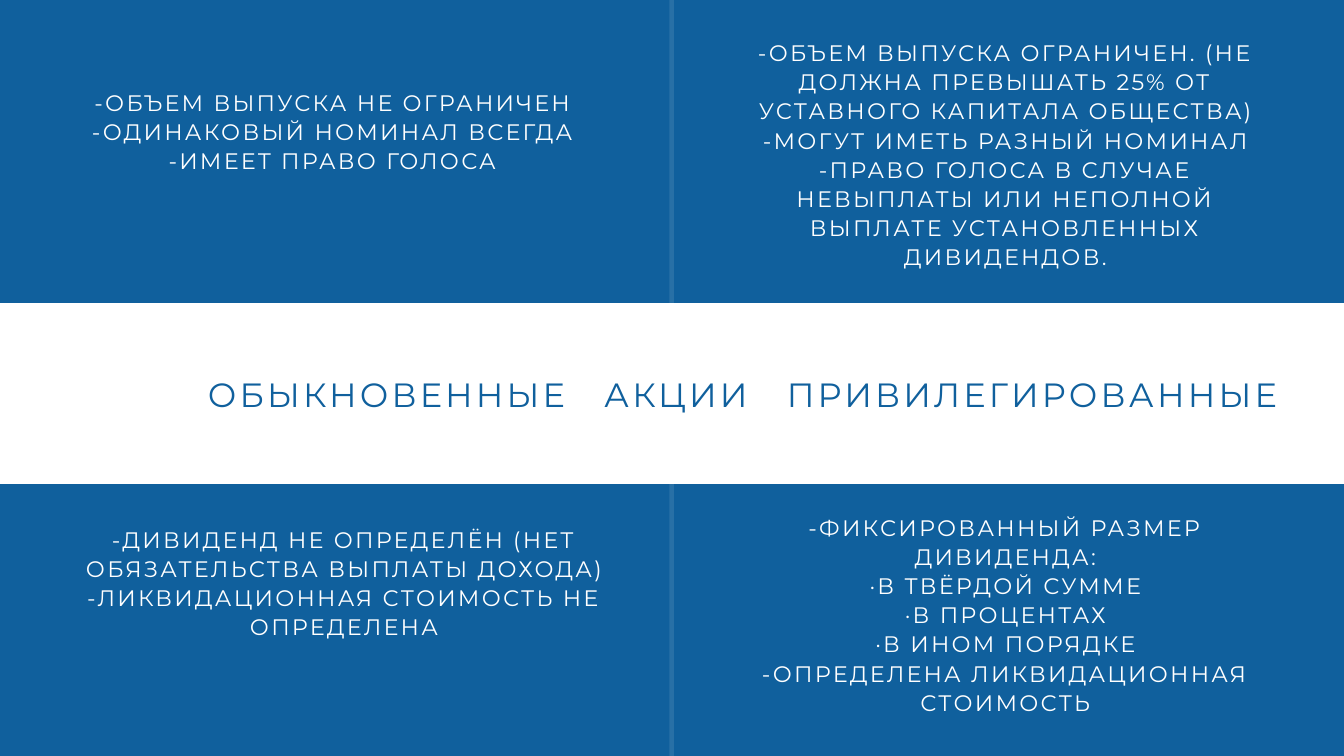
from lxml.etree import SubElement
from pptx import Presentation
from pptx.dml.color import RGBColor
from pptx.enum.shapes import MSO_SHAPE as Preset
from pptx.enum.text import MSO_ANCHOR as Anchor, MSO_AUTO_SIZE as AutoSize, PP_ALIGN as Align
from pptx.oxml.ns import qn
from pptx.util import Inches, Pt

WIDTH, HEIGHT = Inches(20), Inches(11.25)
COLORS = {"blue": "10609D", "white": "FFFFFF"}
FRAME_FORMAT = {
    "margin_left": 0,
    "margin_top": 0,
    "margin_right": 0,
    "margin_bottom": 0,
    "word_wrap": True,
    "vertical_anchor": Anchor.TOP,
    "auto_size": AutoSize.SHAPE_TO_FIT_TEXT,
}
HEADING = {"size": 36, "leading": 43.2, "tracking": 3.4, "color": "blue"}
BODY = {"size": 24, "leading": 31.2, "tracking": 2.4, "color": "white"}
WORD_GAP = 29

LEFT, RIGHT = 0.056, 0.5525
QUADRANTS = [
    ((LEFT, 0.115, 0.3825, 0.113), [
        "-ОБЪЕМ ВЫПУСКА НЕ ОГРАНИЧЕН",
        "-ОДИНАКОВЫЙ НОМИНАЛ ВСЕГДА",
        "-ИМЕЕТ ПРАВО ГОЛОСА",
    ]),
    ((RIGHT, 0.049, 0.391, 0.307), [
        "-ОБЪЕМ ВЫПУСКА ОГРАНИЧЕН. (НЕ ДОЛЖНА ПРЕВЫШАТЬ 25% ОТ УСТАВНОГО КАПИТАЛА ОБЩЕСТВА)",
        "-МОГУТ ИМЕТЬ РАЗНЫЙ НОМИНАЛ",
        "-ПРАВО ГОЛОСА В СЛУЧАЕ НЕВЫПЛАТЫ ИЛИ НЕПОЛНОЙ ВЫПЛАТЕ УСТАНОВЛЕННЫХ ДИВИДЕНДОВ.",
    ]),
    ((LEFT, 0.693, 0.4, 0.15), [
        "-ДИВИДЕНД НЕ ОПРЕДЕЛЁН (НЕТ ОБЯЗАТЕЛЬСТВА ВЫПЛАТЫ ДОХОДА)",
        "-ЛИКВИДАЦИОННАЯ СТОИМОСТЬ НЕ ОПРЕДЕЛЕНА",
    ]),
    ((RIGHT, 0.677, 0.391, 0.265), [
        "-ФИКСИРОВАННЫЙ РАЗМЕР ДИВИДЕНДА:",
        "·В ТВЁРДОЙ СУММЕ",
        "·В ПРОЦЕНТАХ",
        "·В ИНОМ ПОРЯДКЕ",
        "-ОПРЕДЕЛЕНА ЛИКВИДАЦИОННАЯ СТОИМОСТЬ",
    ]),
]


def color(name):
    return RGBColor.from_string(COLORS[name])


def to_emu(box):
    x, y, w, h = box
    return round(x * WIDTH), round(y * HEIGHT), round(w * WIDTH), round(h * HEIGHT)


def add_panel(slide, box, opacity=100):
    panel = slide.shapes.add_shape(Preset.RECTANGLE, *to_emu(box))
    panel.shadow.inherit = False
    panel.line.fill.background()
    panel.fill.solid()
    panel.fill.fore_color.rgb = color("white")
    if opacity < 100:
        tint = panel._element.spPr.find(f".//{qn('a:srgbClr')}")
        SubElement(tint, qn("a:alpha"), val=str(opacity * 1000))


def add_run(paragraph, text, style, tracking):
    run = paragraph.add_run()
    run.text = text
    run.font.name = "Montserrat"
    run.font.size = Pt(style["size"])
    run.font.color.rgb = color(style["color"])
    run._r.get_or_add_rPr().set("spc", str(round(tracking * 100)))


def format_frame(frame):
    for name, value in FRAME_FORMAT.items():
        setattr(frame, name, value)


def format_paragraph(paragraph, style):
    paragraph.alignment = Align.CENTER
    paragraph.line_spacing = Pt(style["leading"])


def place_heading(slide, box, words):
    heading = slide.shapes.title
    heading.left, heading.top, heading.width, heading.height = to_emu(box)
    format_frame(heading.text_frame)
    line = heading.text_frame.paragraphs[0]
    format_paragraph(line, HEADING)
    for index, word in enumerate(words):
        if index:
            add_run(line, " ", HEADING, WORD_GAP)
        add_run(line, word, HEADING, HEADING["tracking"])
    slide.shapes._spTree.append(heading._element)


def add_quadrant(slide, box, features):
    frame = slide.shapes.add_textbox(*to_emu(box)).text_frame
    format_frame(frame)
    for index, feature in enumerate(features):
        paragraph = frame.add_paragraph() if index else frame.paragraphs[0]
        format_paragraph(paragraph, BODY)
        add_run(paragraph, feature, BODY, BODY["tracking"])


def build_comparison(slide):
    slide.background.fill.solid()
    slide.background.fill.fore_color.rgb = color("blue")
    add_panel(slide, (0.498, 0, 0.0035, 1), opacity=10)
    add_panel(slide, (0, 0.401, 1, 0.239))
    place_heading(slide, (0.137, 0.494, 0.831, 0.052),
                  ["ОБЫКНОВЕННЫЕ", "АКЦИИ", "ПРИВИЛЕГИРОВАННЫЕ"])
    for box, features in QUADRANTS:
        add_quadrant(slide, box, features)


def main():
    deck = Presentation()
    deck.slide_width, deck.slide_height = WIDTH, HEIGHT
    title_only = deck.slide_layouts[5]
    build_comparison(deck.slides.add_slide(title_only))
    deck.save("out.pptx")


if __name__ == "__main__":
    main()
